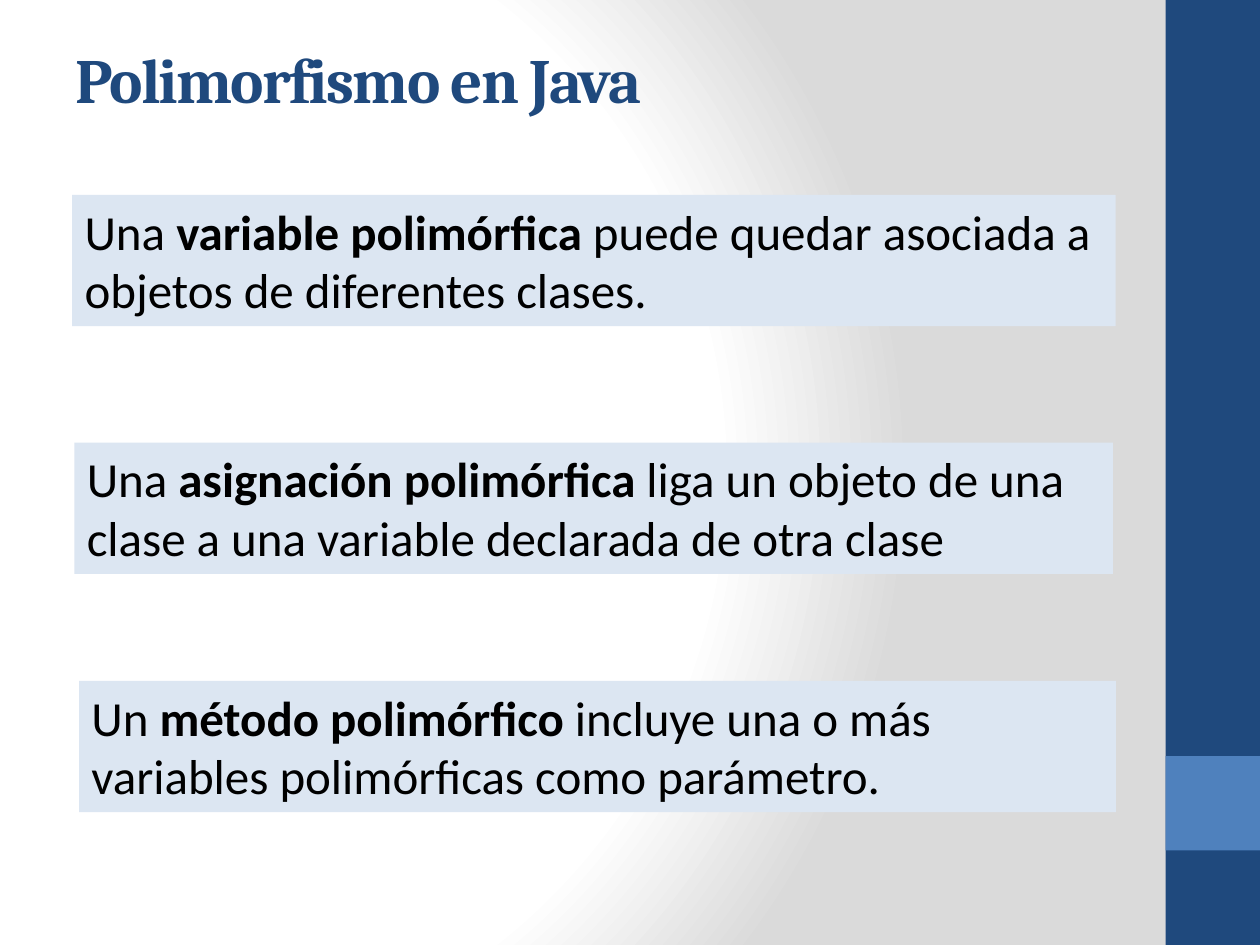
from pptx import Presentation
from pptx.dml.color import RGBColor
from pptx.enum import shapes, text
from pptx.oxml import parse_xml
from pptx.oxml.ns import nsdecls
from pptx.util import Pt

COLORS = {"navy": "1F497D", "blue": "4F81BD", "pale": "DCE6F2",
          "white": "FFFFFF", "gray": "DADADA", "black": "000000"}


def write(frame, runs, font="Calibri", size=28, color="black", track=0,
          anchor=text.MSO_ANCHOR.TOP):
    """Fill a frame with one paragraph of (words, bold) runs."""
    frame.word_wrap = True
    frame.vertical_anchor = anchor
    para = frame.paragraphs[0]
    para.alignment = text.PP_ALIGN.LEFT
    for words, bold in runs:
        run = para.add_run()
        run.text = words
        run.font.name, run.font.size, run.font.bold = font, Pt(size), bold
        run.font.color.rgb = RGBColor.from_string(COLORS[color])
        if track:
            run.font._element.set("spc", str(track * 100))


def block(slide, box, color):
    """Add a plain filled rectangle."""
    rect = slide.shapes.add_shape(shapes.MSO_SHAPE.RECTANGLE, *map(Pt, box))
    rect.shadow.inherit = False
    rect.fill.solid()
    rect.fill.fore_color.rgb = RGBColor.from_string(COLORS[color])
    rect.line.fill.background()
    return rect


def backdrop(slide):
    """Radial gradient centred left of the middle."""
    stops = "".join(
        f'<a:gs pos="{pos * 1000}"><a:srgbClr val="{COLORS[color]}"/></a:gs>'
        for pos, color in ((0, "white"), (75, "white"), (100, "gray")))
    slide._element.cSld.insert(0, parse_xml(
        f'<p:bg {nsdecls("p", "a")}><p:bgPr><a:gradFill rotWithShape="1">'
        f'<a:gsLst>{stops}</a:gsLst><a:path path="circle">'
        '<a:fillToRect l="20000" t="50000" r="100000" b="50000"/></a:path>'
        '</a:gradFill><a:effectLst/></p:bgPr></p:bg>'))


def sidebar(slide, box):
    """Dark band with a lighter square near its foot."""
    left, top, width, height = box
    block(slide, box, "navy")
    block(slide, (left, top + height - 2 * width, width, width), "blue")


def title(slide, box, words):
    frame = slide.shapes.add_textbox(*map(Pt, box)).text_frame
    write(frame, [(words, True)], font="Cambria", size=36, color="navy",
          track=-1, anchor=text.MSO_ANCHOR.MIDDLE)


def note(slide, box, start, term, rest):
    """Definition panel with its term in bold."""
    frame = block(slide, box, "pale").text_frame
    write(frame, [(start, False), (term, True), (rest, False)])


def main():
    deck = Presentation()
    deck.slide_width, deck.slide_height = Pt(720), Pt(540)
    slide = deck.slides.add_slide(deck.slide_layouts[6])

    backdrop(slide)
    sidebar(slide, (666, 0, 54, 540))
    title(slide, (36, 0, 600, 90), "Polimorfismo en Java")

    # Definitions: left, top, width, then the three runs
    notes = (
        (41.3, 111.4, 596.3, "Una ", "variable polimórfica ",
         "puede quedar asociada a objetos de diferentes clases."),
        (42.5, 253, 593.5, "Una ", "asignación polimórfica ",
         "liga un objeto de una clase a una variable declarada de otra clase"),
        (45.2, 389.1, 592.5, "Un ", "método polimórfico ",
         "incluye una o más variables polimórficas como parámetro."),
    )
    for left, top, width, *runs in notes:
        note(slide, (left, top, width, 75), *runs)

    deck.save("out.pptx")


if __name__ == "__main__":
    main()
